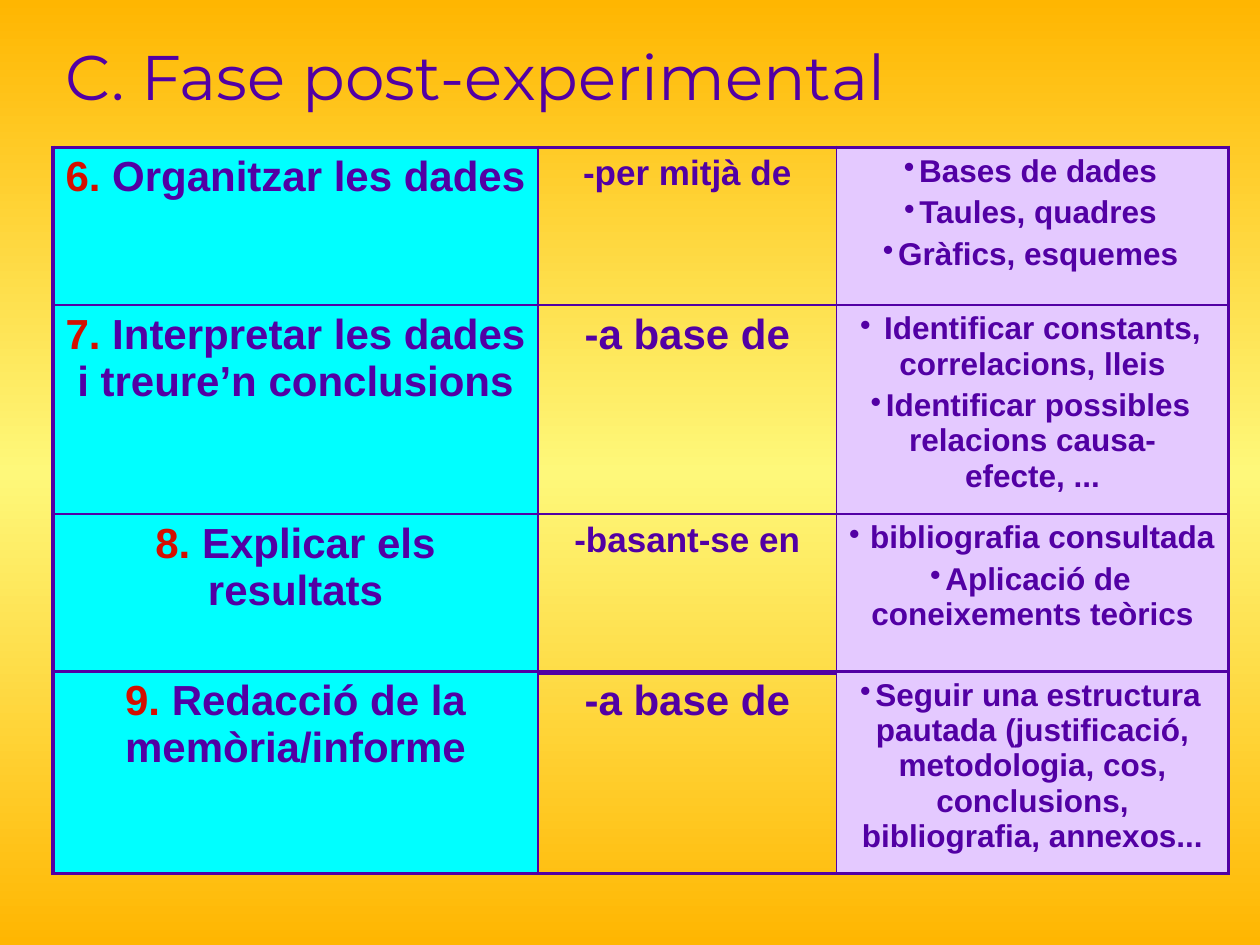
from copy import deepcopy
from dataclasses import dataclass

from lxml.etree import SubElement
from pptx import Presentation
from pptx.dml.color import RGBColor
from pptx.enum.text import MSO_AUTO_SIZE, PP_ALIGN
from pptx.oxml.ns import qn
from pptx.util import Inches, Pt


@dataclass(frozen=True)
class Theme:
    ink: str = "5200A4"
    number: str = "D40F00"
    phase: str = "00FFFF"
    detail: str = "E4C9FF"
    edge: str = "FFB601"
    glow: str = "FEF87A"
    title_font: str = "Montserrat"
    body_font: str = "Arial"
    title_size: int = 36
    large: int = 24
    medium: int = 20
    small: int = 18
    thick: float = 2.25
    thin: float = 1


THEME = Theme()
COLUMN_WIDTHS = (3.85, 2.37, 3.11)

EXPERIMENT_STEPS = [
    (1.25, "6.", " Organitzar les dades", "-per mitjà de", THEME.medium,
     ["Bases de dades", "Taules, quadres", "Gràfics, esquemes"]),
    (1.66, "7.", " Interpretar les dades i treure’n conclusions", "-a base de", THEME.large,
     [" Identificar constants, correlacions, lleis",
      "Identificar possibles relacions causa-efecte, ..."]),
    (1.26, "8.", " Explicar els resultats", "-basant-se en", THEME.medium,
     [" bibliografia consultada", "Aplicació de coneixements teòrics"]),
]
REPORT_STEPS = [
    (1.6, "9.", " Redacció de la memòria/informe", "-a base de", THEME.large,
     ["Seguir una estructura pautada (justificació, metodologia, cos, "
      "conclusions, bibliografia, annexos..."]),
]


def add_run(paragraph, text, size, color=THEME.ink, font=THEME.body_font, bold=True):
    run = paragraph.add_run()
    run.text = text
    run.font.name = font
    run.font.size = Pt(size)
    run.font.bold = bold
    run.font.color.rgb = RGBColor.from_string(color)


def add_solid_color(parent, tag, color):
    SubElement(SubElement(parent, qn(tag)), qn("a:srgbClr"), val=color)


def set_bullet(paragraph):
    properties = paragraph._p.get_or_add_pPr()
    properties.set("marL", "0")
    properties.set("indent", str(-Inches(0.12)))
    add_solid_color(properties, "a:buClr", THEME.ink)
    SubElement(properties, qn("a:buChar"), char="•")


def set_borders(cell, widths):
    properties = cell._tc.get_or_add_tcPr()
    for side, width in widths.items():
        line = SubElement(properties, qn(f"a:ln{side}"), w=str(Pt(width)))
        add_solid_color(line, "a:solidFill", THEME.ink)


def set_fill(cell, color):
    if color is None:
        cell.fill.background()
    else:
        cell.fill.solid()
        cell.fill.fore_color.rgb = RGBColor.from_string(color)


def fill_step(cells, number, phase, link, link_size, details):
    phase_cell, link_cell, detail_cell = cells
    paragraph = phase_cell.text_frame.paragraphs[0]
    paragraph.alignment = PP_ALIGN.CENTER
    add_run(paragraph, number, THEME.large, THEME.number)
    add_run(paragraph, phase, THEME.large)

    paragraph = link_cell.text_frame.paragraphs[0]
    paragraph.alignment = PP_ALIGN.CENTER
    add_run(paragraph, link, link_size)

    frame = detail_cell.text_frame
    for index, detail in enumerate(details):
        paragraph = frame.add_paragraph() if index else frame.paragraphs[0]
        paragraph.alignment = PP_ALIGN.CENTER
        if index:
            paragraph.space_before = Pt(3.6)
        set_bullet(paragraph)
        add_run(paragraph, detail, THEME.small)


def add_step_table(slide, steps, left, top, width, bottom_width):
    height = sum(step[0] for step in steps)
    shape = slide.shapes.add_table(len(steps), len(COLUMN_WIDTHS), Inches(left),
                                   Inches(top), Inches(width), Inches(height))
    table = shape.table
    table.first_row = False
    table.horz_banding = False
    for column, column_width in zip(table.columns, COLUMN_WIDTHS):
        column.width = Inches(column_width)

    last_row, last_column = len(steps) - 1, len(COLUMN_WIDTHS) - 1
    for row_index, (row_height, *content) in enumerate(steps):
        row = table.rows[row_index]
        row.height = Inches(row_height)
        for column_index, cell in enumerate(row.cells):
            set_borders(cell, {
                "L": THEME.thin if column_index else THEME.thick,
                "R": THEME.thick if column_index == last_column else THEME.thin,
                "T": THEME.thin if row_index else THEME.thick,
                "B": bottom_width if row_index == last_row else THEME.thin,
            })
            set_fill(cell, (THEME.phase, None, THEME.detail)[column_index])
        fill_step(list(row.cells), *content)


def add_title(slide, text, left, top, width, height):
    box = slide.shapes.add_textbox(Inches(left), Inches(top), Inches(width), Inches(height))
    frame = box.text_frame
    frame.word_wrap = True
    frame.auto_size = MSO_AUTO_SIZE.SHAPE_TO_FIT_TEXT
    add_run(frame.paragraphs[0], text, THEME.title_size, font=THEME.title_font, bold=False)


def paint_background(slide):
    fill = slide.background.fill
    fill.gradient()
    fill.gradient_angle = 270
    stop_list = slide.element.find(".//" + qn("a:gsLst"))
    stop_list.insert(1, deepcopy(stop_list[0]))
    colors = (THEME.edge, THEME.glow, THEME.edge)
    for stop, position, color in zip(fill.gradient_stops, (0, 0.5, 1), colors):
        stop.position = position
        stop.color.rgb = RGBColor.from_string(color)


def main():
    presentation = Presentation()
    presentation.slide_width = Inches(10)
    presentation.slide_height = Inches(7.5)
    slide = presentation.slides.add_slide(presentation.slide_layouts[6])
    paint_background(slide)
    add_step_table(slide, EXPERIMENT_STEPS, 0.42, 1.17, sum(COLUMN_WIDTHS), THEME.thick)
    add_title(slide, "C. Fase post-experimental", 0.42, 0.25, 9.25, 0.7)
    add_step_table(slide, REPORT_STEPS, 0.42, 5.33, sum(COLUMN_WIDTHS), THEME.thick)
    presentation.save("out.pptx")


if __name__ == "__main__":
    main()
